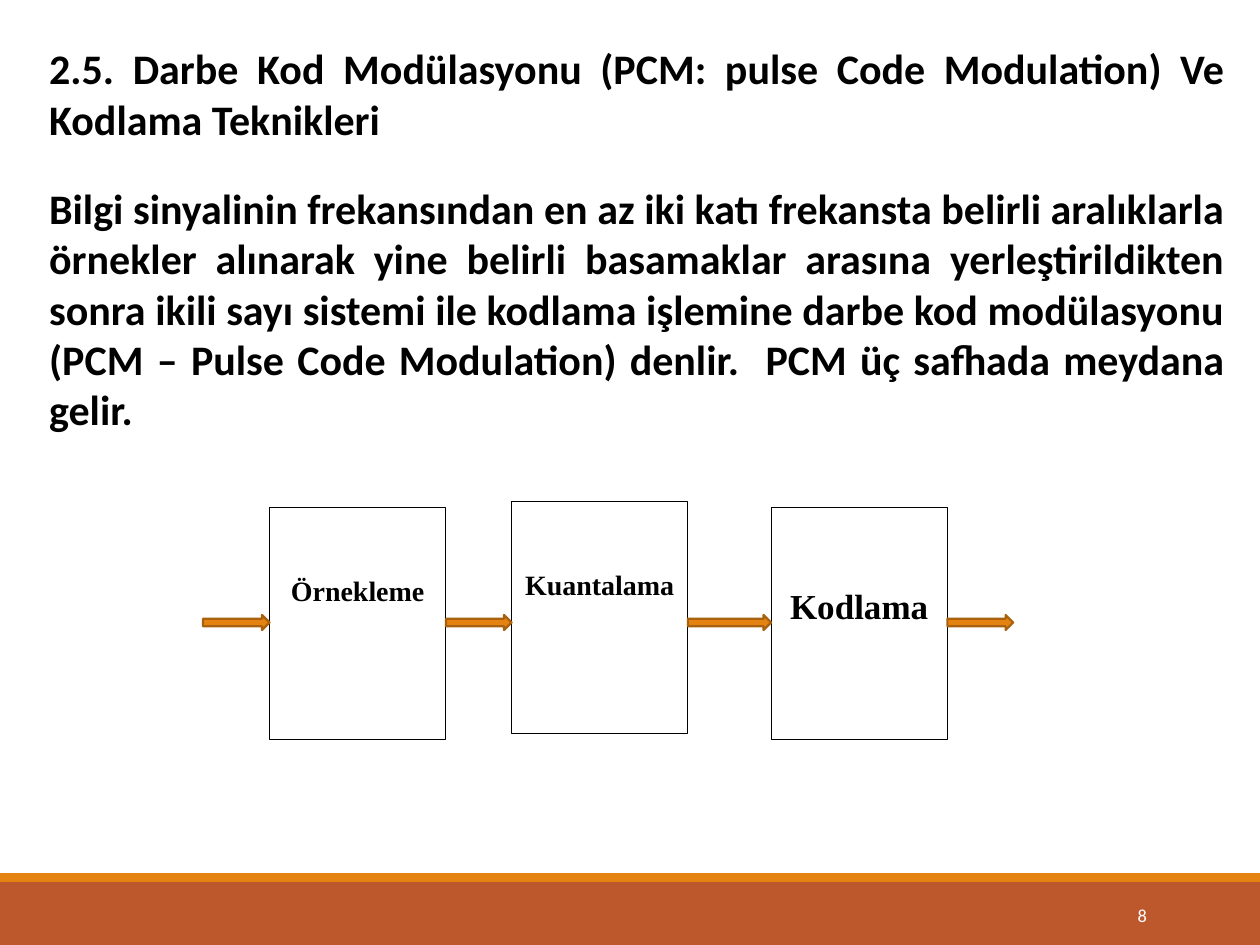
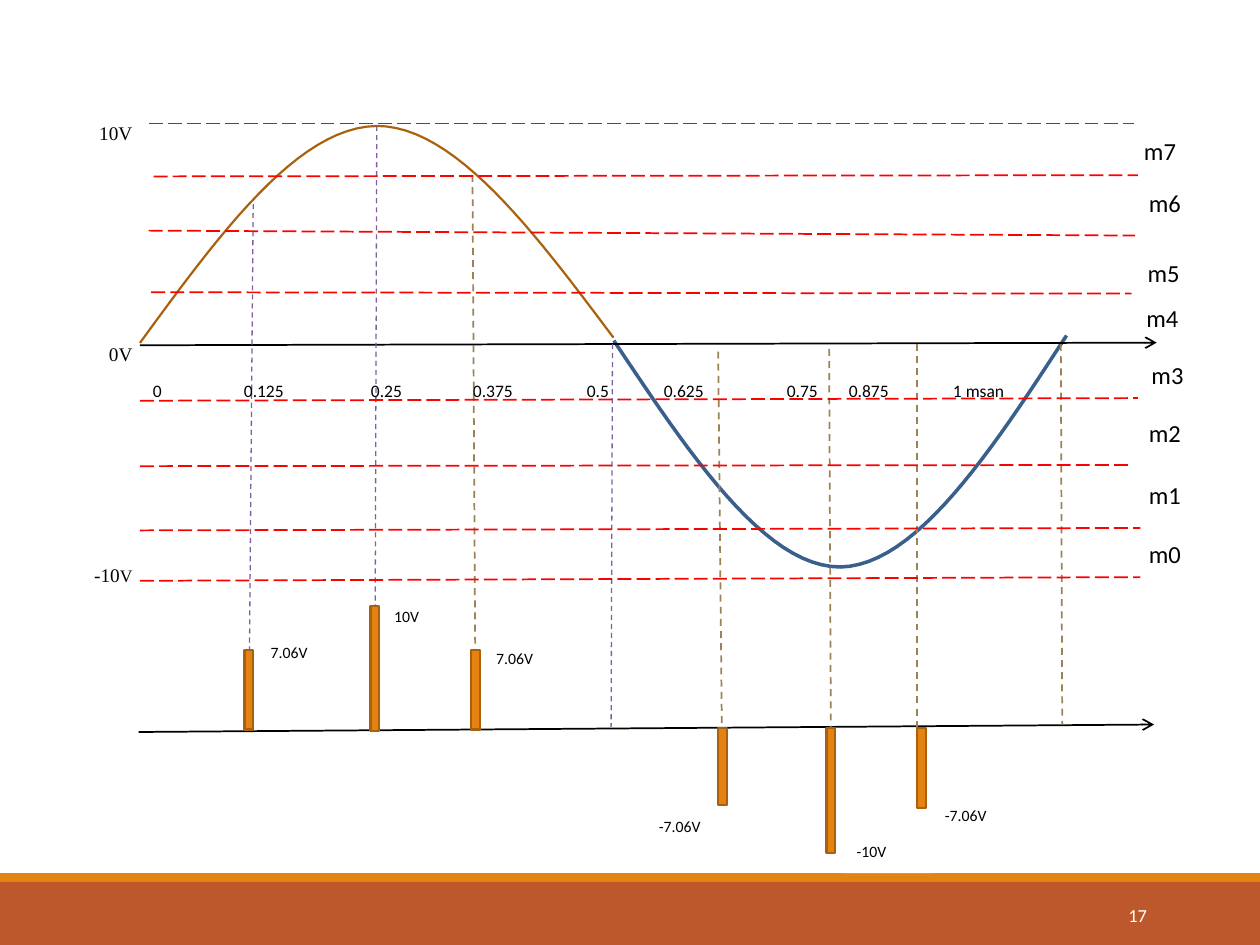
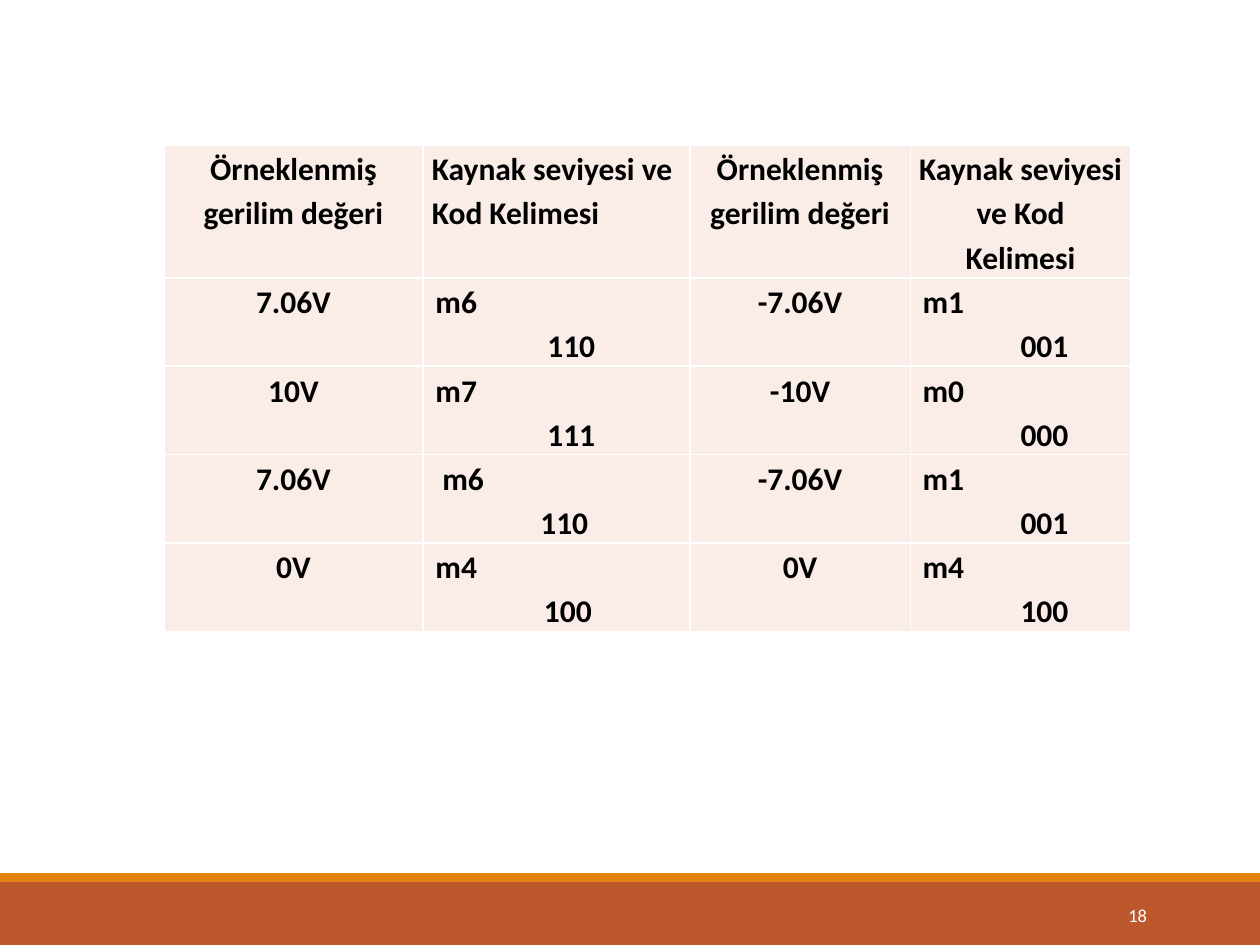
from pptx import Presentation
from pptx.dml.color import RGBColor as RGB
from pptx.enum.dml import MSO_LINE as Dash
from pptx.enum.shapes import MSO_CONNECTOR as Link, MSO_SHAPE as Kind
from pptx.enum.text import MSO_ANCHOR as Anchor, PP_ALIGN as Align
from pptx.oxml.ns import qn
from pptx.util import Pt
from lxml.etree import SubElement

BLACK = RGB(0x00, 0x00, 0x00)
WHITE = RGB(0xFF, 0xFF, 0xFF)
RUST = RGB(0xBD, 0x58, 0x2C)
ORANGE = RGB(0xE4, 0x83, 0x12)
BROWN = RGB(0xA9, 0x61, 0x0D)
BLUE = RGB(0x3A, 0x5F, 0x8C)
RED = RGB(0xFF, 0x00, 0x00)
TAN = RGB(0x9B, 0x83, 0x57)
VIOLET = RGB(0x7D, 0x60, 0xA0)
PEACH = RGB(0xFA, 0xED, 0xE7)
SANS, SERIF = "Calibri", "Times New Roman"

# Slide 8: definition and block diagram
INTRO = [
    "2.5. Darbe Kod Modülasyonu (PCM: pulse Code Modulation) Ve Kodlama Teknikleri",
    "Bilgi sinyalinin frekansından en az iki katı frekansta belirli aralıklarla "
    "örnekler alınarak yine belirli basamaklar arasına yerleştirildikten sonra "
    "ikili sayı sistemi ile kodlama işlemine darbe kod modülasyonu (PCM – Pulse "
    "Code Modulation) denlir.  PCM üç safhada meydana gelir.",
]
STAGES = [  # name, size, left, top
    ("Örnekleme", 16, 154, 290.2),
    ("Kuantalama", 16, 292.3, 286.6),
    ("Kodlama", 20, 440.6, 290.2),
]
STAGE_W, STAGE_H = 100.8, 132.5
FLOW_IN, FLOW_OUT = 116, 579

# Slide 17: sampled sine wave
VOLTS = [[("10V", 11)], [("0V", 11)], [("-10", 11), ("V", 10)]]
WAVES = [  # colour, width, cubic curve points
    (BROWN, 1.25, [(80, 196), (125.3, 134), (170, 72.7), (215.3, 72),
                   (260, 72), (305.3, 132.5), (350.6, 193)]),
    (BLUE, 2, [(609.5, 191.7), (566.6, 257.8), (523.4, 323.3), (480.2, 324),
               (437, 324), (393.8, 259.2), (350.8, 194.6)]),
]
AXES = [(80, 197.3, 661, 195.8), (79.2, 418.3, 659.5, 414)]
TIMES = [("0", 87.4), ("0.125", 139.4), ("0.25", 212), ("0.375", 270.3),
         ("0.5", 335.4), ("0.625", 379.4), ("0.75", 449.7), ("0.875", 485.1),
         ("1 msan", 544.6)]
DROPS = [  # colour, width, ends, bar (left, top, height), joined side
    (VIOLET, 0.75, (144.7, 116.6, 141.8, 416.9), (139.7, 371.5, 45.4), 2),
    (VIOLET, 0.75, (215.3, 72, 214.6, 418.3), (211.7, 346.3, 71.3), 2),
    (TAN, 1, (270, 100, 272.2, 416.9), (269.3, 371.5, 45.4), 2),
    (VIOLET, 0.75, (350, 196.6, 349.2, 415.4), None, None),
    (TAN, 1, (410.4, 200.9, 412.6, 460.8), (410.4, 416.2, 43.9), 2),
    (TAN, 1, (473.8, 199.4, 474.5, 416.2), (472.3, 416.2, 71.3), 0),
    (TAN, 1, (524.2, 196.6, 524.2, 456.5), (524.2, 416.2, 45.4), None),
    (TAN, 1, (606.2, 196.6, 607, 414), None, None),
]
BAR_W = 5
VALUES = [  # text, left, top, width, height
    ("7.06V", 147.6, 362.2, 41, 23), ("10V", 218.2, 341.3, 31.7, 18.7),
    ("7.06V", 276.5, 365.8, 62.6, 23), ("-7.06V", 369.4, 461.5, 62.6, 23),
    ("-10V", 482.4, 475.9, 50.4, 23), ("-7.06V", 532.8, 455, 42.5, 23),
]
LEVELS = [
    (85, 70.6, 648, 70.6), (87.8, 100.8, 650.2, 100.1),
    (85, 131.8, 648.7, 134.6), (86.4, 167, 646.6, 167.8),
    (80, 229, 650.2, 227.5), (80, 266.4, 645.1, 265.7),
    (80, 303.1, 651.6, 301.7), (80, 331.9, 651.6, 329.8),
]
MARKS = [("m7", 646.6, 74.2), ("m6", 649.4, 103.7), ("m5", 648.7, 144),
         ("m4", 648, 169.9), ("m3", 650.9, 202.3), ("m2", 649.4, 235.4),
         ("m1", 649.4, 270.7), ("m0", 649.4, 304.6)]

# Slide 18: code table; a code cell is (level, code, level indent, code indent)
HEADS = ["Örneklenmiş gerilim değeri", "Kaynak seviyesi ve Kod Kelimesi"] * 2
ROWS = [
    ("7.06V", ("m6", "110", 2, 66), "-7.06V", ("m1", "001", 2, 58)),
    ("10V", ("m7", "111", 2, 66), "-10V", ("m0", "000", 2, 58)),
    ("7.06V", ("m6", "110", 6, 62), "-7.06V", ("m1", "001", 2, 58)),
    ("0V", ("m4", "100", 2, 64), "0V", ("m4", "100", 2, 58)),
]
COLS = [148.2, 152.4, 126, 126]
HEAD_H, ROW_H = 76, 50.5


def put(par, text, size, font=SANS, color=BLACK, bold=False):
    run = par.add_run()
    run.text = text
    run.font.size, run.font.name, run.font.bold = Pt(size), font, bold
    run.font.color.rgb = color


def write(shape, paras, align=Align.LEFT, gap=0, lead=1.0, pad=None,
          anchor=Anchor.TOP, **look):
    """Fill a shape with paragraphs, each a list of (text, size) runs."""
    frame = shape.text_frame
    frame.word_wrap, frame.vertical_anchor = True, anchor
    if pad:
        (frame.margin_left, frame.margin_top,
         frame.margin_right, frame.margin_bottom) = map(Pt, pad)
    for i, runs in enumerate(paras):
        par = frame.add_paragraph() if i else frame.paragraphs[0]
        par.alignment, par.line_spacing = align, lead
        if i:
            par.space_before = Pt(gap)
        for text, size in runs:
            put(par, text, size, **look)


def block(slide, x, y, w, h, fill, line=None, width=1.25, kind=Kind.RECTANGLE):
    shape = slide.shapes.add_shape(kind, Pt(x), Pt(y), Pt(w), Pt(h))
    shape.shadow.inherit = False
    shape.fill.solid()
    shape.fill.fore_color.rgb = fill
    if line is None:
        shape.line.fill.background()
    else:
        shape.line.color.rgb, shape.line.width = line, Pt(width)
    return shape


def note(slide, x, y, w, h, paras, **look):
    write(slide.shapes.add_textbox(Pt(x), Pt(y), Pt(w), Pt(h)), paras, **look)


def rule(slide, ends, color, width=1, dash=None, arrow=False):
    link = slide.shapes.add_connector(Link.STRAIGHT, *map(Pt, ends))
    link.line.color.rgb, link.line.width = color, Pt(width)
    if dash:
        link.line.dash_style = dash
    props = link.element.spPr
    if arrow:
        SubElement(props.find(qn("a:ln")), qn("a:tailEnd"), type="arrow")
    SubElement(props, qn("a:effectLst"))
    return link


def curve(slide, color, width, pts, steps=24):
    """Trace joined cubic segments as a fine open outline."""
    dots = [pts[0]]
    for s in range(0, len(pts) - 1, 3):
        a, b, c, d = pts[s:s + 4]
        for k in range(1, steps + 1):
            t = k / steps
            u = 1 - t
            dots.append(tuple(
                u**3 * a[n] + 3 * u * u * t * b[n] + 3 * u * t * t * c[n] + t**3 * d[n]
                for n in (0, 1)))
    dots = [(Pt(x), Pt(y)) for x, y in dots]
    pen = slide.shapes.build_freeform(*dots[0])
    pen.add_line_segments(dots[1:], close=False)
    wave = pen.convert_to_shape()
    wave.shadow.inherit = False
    wave.fill.background()
    wave.line.color.rgb, wave.line.width = color, Pt(width)


def page(deck, number):
    """Add a blank slide with the shared bands and slide number."""
    slide = deck.slides.add_slide(deck.slide_layouts[6])
    block(slide, 0, 504, 720, 36, RUST)
    block(slide, 0, 499, 720, 5, ORANGE)
    note(slide, 584.6, 508.3, 77.8, 28.8, [[(str(number), 10.5)]],
         align=Align.RIGHT, anchor=Anchor.MIDDLE, color=WHITE)
    return slide


def stages(deck):
    slide = page(deck, 8)
    note(slide, 21, 21, 686, 232.6, [[(text, 24)] for text in INTRO],
         align=Align.JUSTIFY, gap=22, bold=True)
    for name, size, x, y in STAGES:
        box = block(slide, x, y, STAGE_W, STAGE_H, WHITE, BLACK, 0.5)
        write(box, [[(name, size)]], align=Align.CENTER, lead=1.15,
              pad=(7.2, 13.6 + 1.32 * size, 7.2, 3.6), font=SERIF, bold=True)
    # Arrows fill the gaps between the boxes
    lefts = [s[2] for s in STAGES]
    starts = [FLOW_IN] + [x + STAGE_W for x in lefts]
    for x, end in zip(starts, lefts + [FLOW_OUT]):
        block(slide, x, 351.4, end - x, 8.6, ORANGE, BROWN, kind=Kind.RIGHT_ARROW)


def signal(deck):
    slide = page(deck, 17)
    scale = block(slide, 23.8, 64, 59, 294.5, WHITE)
    write(scale, VOLTS, align=Align.RIGHT, gap=111, lead=1.15, font=SERIF)
    for wave in WAVES:
        curve(slide, *wave)
    for ends in AXES:
        rule(slide, ends, BLACK, arrow=True)
    # Sample lines, then the bars over them
    drops = [rule(slide, ends, color, width, Dash.DASH)
             for color, width, ends, _, _ in DROPS]
    for text, x in TIMES:
        note(slide, x, 215.3, 50, 16, [[(text, 10)]], lead=1.15, pad=(0, 0, 0, 0))
    for drop, (_, _, _, bar, side) in zip(drops, DROPS):
        if bar:
            x, y, h = bar
            pulse = block(slide, x, y, BAR_W, h, ORANGE, BROWN)
            if side is not None:
                drop.end_connect(pulse, side)
    for text, *place in VALUES:
        write(block(slide, *place, WHITE), [[(text, 9)]], lead=1.15)
    # Quantising levels and their names
    for ends in LEVELS:
        rule(slide, ends, RED, dash=Dash.LONG_DASH)
    for text, x, y in MARKS:
        note(slide, x, y, 51, 24.5, [[(text, 14)]])


def cell_text(cell, text, align):
    """Write plain text, or a level and its code on two indented lines."""
    parts = [(text, 0)] if isinstance(text, str) else zip(text[:2], text[2:])
    for i, (word, indent) in enumerate(parts):
        par = cell.text_frame.add_paragraph() if i else cell.text_frame.paragraphs[0]
        par.alignment, par.line_spacing = align, 1.15
        if indent:
            par._p.get_or_add_pPr().set("marL", str(Pt(indent)))
        put(par, word, 18, bold=True)


def codes(deck):
    slide = page(deck, 18)
    high = HEAD_H + ROW_H * len(ROWS)
    grid = slide.shapes.add_table(len(ROWS) + 1, len(COLS), Pt(93.6), Pt(82.8),
                                  Pt(sum(COLS)), Pt(high)).table
    grid.first_row = grid.horz_banding = False
    for col, w in zip(grid.columns, COLS):
        col.width = Pt(w)
    for r, texts in enumerate([HEADS] + ROWS):
        grid.rows[r].height = Pt(ROW_H if r else HEAD_H)
        for c, text in enumerate(texts):
            cell = grid.cell(r, c)
            cell.margin_left = cell.margin_right = Pt(5)
            cell.margin_top = cell.margin_bottom = 0
            props = cell._tc.get_or_add_tcPr()
            for edge in ("lnL", "lnR", "lnT", "lnB"):
                line = SubElement(props, qn("a:" + edge), w=str(Pt(1)))
                paint = SubElement(line, qn("a:solidFill"))
                SubElement(paint, qn("a:srgbClr"), val=str(WHITE))
            cell.fill.solid()
            cell.fill.fore_color.rgb = PEACH
            left = not isinstance(text, str) or (r, c) == (0, 1)
            cell_text(cell, text, Align.LEFT if left else Align.CENTER)


def main():
    deck = Presentation()
    deck.slide_width, deck.slide_height = Pt(720), Pt(540)
    stages(deck)
    signal(deck)
    codes(deck)
    deck.save("out.pptx")


if __name__ == "__main__":
    main()
